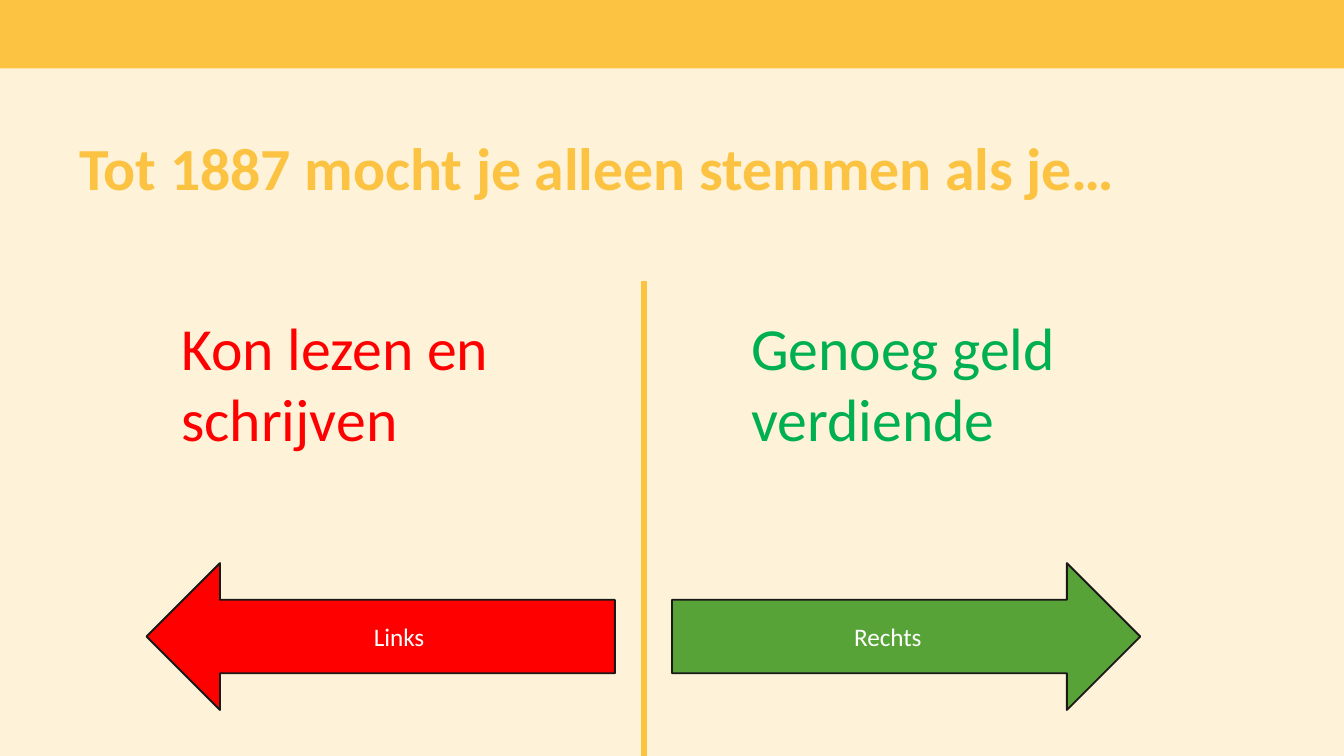
import pptx
import pptx.dml.color
import pptx.enum.shapes
import pptx.enum.text
import pptx.oxml
import pptx.util

Pt = pptx.util.Pt
SHAPES = pptx.enum.shapes.MSO_SHAPE
FONT = "Calibri"
WIDTH, HEIGHT = 720, 405
COLOURS = {
    "background": "FEF3D9",
    "accent": "FCC241",
    "red": "FF0000",
    "green_text": "00B050",
    "green_arrow": "58A337",
    "outline": "1A1918",
    "white": "FFFFFF",
}


def colour(name):
    return pptx.dml.color.RGBColor.from_string(COLOURS[name])


def add_run(paragraph, text, size, colour_name, bold=False):
    run = paragraph.add_run()
    run.text = text
    run.font.name = FONT
    run.font.size = Pt(size)
    run.font.bold = bold
    run.font.color.rgb = colour(colour_name)


def add_filled_shape(slide, kind, box, fill):
    shape = slide.shapes.add_shape(kind, *map(Pt, box))
    shape.shadow.inherit = False
    shape.fill.solid()
    shape.fill.fore_color.rgb = colour(fill)
    return shape


def add_text_box(slide, box):
    frame = slide.shapes.add_textbox(*map(Pt, box)).text_frame
    frame.word_wrap = True
    return frame


def add_banner(slide, box):
    banner = add_filled_shape(slide, SHAPES.RECTANGLE, box, "accent")
    banner.line.fill.background()


def add_divider(slide, box):
    left, top, width, height = box
    divider = slide.shapes.add_connector(
        pptx.enum.shapes.MSO_CONNECTOR.STRAIGHT,
        Pt(left), Pt(top), Pt(left + width), Pt(top + height))
    divider.line.color.rgb = colour("accent")
    divider.line.width = Pt(3)
    properties = divider._element.spPr
    properties.append(pptx.oxml.parse_xml(
        '<a:effectLst xmlns:a="http://schemas.openxmlformats.org/drawingml/2006/main"/>'))


def add_title(slide, box, text):
    frame = add_text_box(slide, box)
    frame.margin_left = frame.margin_right = frame.margin_bottom = 0
    paragraph = frame.paragraphs[0]
    paragraph.line_spacing = Pt(36)
    add_run(paragraph, text, 32, "accent", bold=True)


def add_answer(slide, box, text, colour_name):
    frame = add_text_box(slide, box)
    frame.auto_size = pptx.enum.text.MSO_AUTO_SIZE.SHAPE_TO_FIT_TEXT
    add_run(frame.paragraphs[0], text, 32, colour_name)


def add_arrow(slide, box, kind, label, fill):
    arrow = add_filled_shape(slide, kind, box, fill)
    arrow.line.color.rgb = colour("outline")
    arrow.line.width = Pt(1)
    frame = arrow.text_frame
    frame.vertical_anchor = pptx.enum.text.MSO_ANCHOR.MIDDLE
    paragraph = frame.paragraphs[0]
    paragraph.alignment = pptx.enum.text.PP_ALIGN.CENTER
    add_run(paragraph, label, 13.5, "white")


def main():
    presentation = pptx.Presentation()
    presentation.slide_width = Pt(WIDTH)
    presentation.slide_height = Pt(HEIGHT)
    slide = presentation.slides.add_slide(presentation.slide_layouts[6])
    slide.background.fill.solid()
    slide.background.fill.fore_color.rgb = colour("background")

    # Banner and the divider between the two choices
    add_banner(slide, (0, 0, WIDTH, 36.7))
    divider_top = 150.5
    add_divider(slide, (345, divider_top, 0, HEIGHT - divider_top))

    # Direction arrows
    arrow_top, arrow_width, arrow_height = 301.7, 250.9, 78.7
    add_arrow(slide, (360, arrow_top, arrow_width, arrow_height),
              SHAPES.RIGHT_ARROW, "Rechts", "green_arrow")
    add_arrow(slide, (78.5, arrow_top, arrow_width, arrow_height),
              SHAPES.LEFT_ARROW, "Links", "red")

    # Question and its two answers
    add_title(slide, (42.5, 69, 566, 70.5),
              "Tot 1887 mocht je alleen stemmen als je…")
    answer_top, answer_height = 162.7, 85
    add_answer(slide, (90, answer_top, 212.5, answer_height),
               "Kon lezen en schrijven", "red")
    add_answer(slide, (395.3, answer_top, 276.5, answer_height),
               "Genoeg geld verdiende", "green_text")

    presentation.save("out.pptx")


if __name__ == "__main__":
    main()
